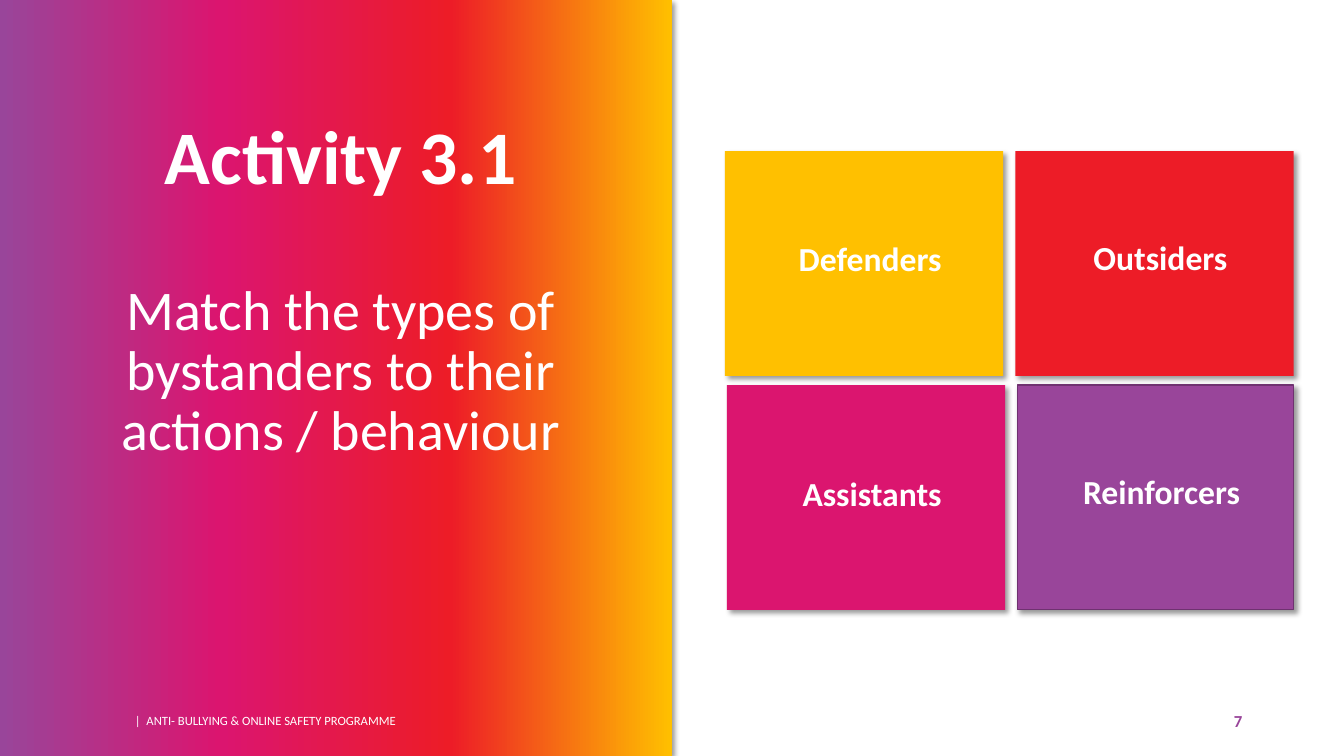
from lxml.etree import SubElement
from pptx import Presentation
from pptx.dml.color import RGBColor
from pptx.enum.shapes import MSO_SHAPE as Shape
from pptx.enum.text import MSO_ANCHOR as Anchor, PP_ALIGN as Align
from pptx.oxml.ns import qn
from pptx.util import Inches, Pt

COLOURS = {
    "purple": "99459A",
    "pink": "DB156F",
    "red": "ED1C27",
    "yellow": "FFC000",
    "plum": "6F3270",
    "white": "FFFFFF",
    "black": "000000",
}


def rgb(colour):
    return RGBColor.from_string(COLOURS[colour])


def add_run(paragraph, text, size=24, colour="white", bold=False, font="Calibri"):
    run = paragraph.add_run()
    run.text = text
    run.font.name = font
    run.font.size = Pt(size)
    run.font.bold = bold
    run.font.color.rgb = rgb(colour)


class SlideBuilder:
    def __init__(self, slide):
        self.slide = slide

    def panel(self, left, top, width, height, fill=None, gradient=None, line=None):
        """Rectangle with a soft shadow; gradient is a list of (percent, colour)."""
        panel = self.slide.shapes.add_shape(
            Shape.RECTANGLE, Inches(left), Inches(top), Inches(width), Inches(height))
        if gradient:
            panel.fill.gradient()
            panel.fill.gradient_angle = 0
            stops = panel._element.spPr.find(qn("a:gradFill")).find(qn("a:gsLst"))
            for stop in list(stops):
                stops.remove(stop)
            for percent, colour in gradient:
                stop = SubElement(stops, qn("a:gs"), pos=str(percent * 1000))
                SubElement(stop, qn("a:srgbClr"), val=COLOURS[colour])
        else:
            panel.fill.solid()
            panel.fill.fore_color.rgb = rgb(fill)
        if line:
            panel.line.color.rgb = rgb(line)
            panel.line.width = Pt(1)
        else:
            panel.line.fill.background()
        self.shadow(panel)

    def shadow(self, panel):
        panel.shadow.inherit = False
        effects = panel._element.spPr.find(qn("a:effectLst"))
        outer = SubElement(effects, qn("a:outerShdw"), blurRad=str(Pt(4)),
                           dist=str(Pt(3)), dir=str(45 * 60000),
                           algn="tl", rotWithShape="0")
        tint = SubElement(outer, qn("a:srgbClr"), val=COLOURS["black"])
        SubElement(tint, qn("a:alpha"), val="40000")

    def frame(self, left, top, width, height, anchor=Anchor.TOP):
        box = self.slide.shapes.add_textbox(
            Inches(left), Inches(top), Inches(width), Inches(height))
        box.text_frame.word_wrap = True
        box.text_frame.vertical_anchor = anchor
        return box.text_frame

    def centred(self, paragraph, text, space_before=0, **style):
        """Centred paragraph with tight lines and a small left margin."""
        paragraph.alignment = Align.CENTER
        paragraph.line_spacing = 0.9
        paragraph.space_before = Pt(space_before)
        paragraph._p.get_or_add_pPr().set("marL", str(Inches(0.12)))
        add_run(paragraph, text, **style)


def main():
    deck = Presentation()
    deck.slide_width, deck.slide_height = Inches(13.33), Inches(7.5)
    page = SlideBuilder(deck.slides.add_slide(deck.slide_layouts[6]))

    page.panel(0, 0, 6.67, 7.5, gradient=[
        (0, "purple"), (33, "pink"), (67, "red"), (100, "yellow")])

    activity = page.frame(0.64, 1.13, 5.36, 5.17)
    page.centred(activity.paragraphs[0], "Activity 3.1", size=54, bold=True)
    page.centred(activity.add_paragraph(),
                 "Match the types of bystanders to their actions / behaviour",
                 space_before=58, size=40)

    page_number = page.frame(9.42, 6.95, 3, 0.4, Anchor.MIDDLE).paragraphs[0]
    page_number.alignment = Align.RIGHT
    add_run(page_number, "7", size=12, colour="purple", bold=True)

    footer = page.frame(1.24, 6.95, 4.18, 0.4, Anchor.MIDDLE).paragraphs[0]
    add_run(footer, "|  ANTI- BULLYING & ONLINE SAFETY PROGRAMME", size=9)

    # Bystander type, card left, top and width, label top, fill, outline
    bystanders = [
        ("Defenders", 7.19, 1.5, 2.76, 2.36, "yellow", None),
        ("Outsiders", 10.07, 1.5, 2.76, 2.35, "red", None),
        ("Assistants", 7.21, 3.82, 2.76, 4.69, "pink", None),
        ("Reinforcers", 10.09, 3.82, 2.74, 4.67, "purple", "plum"),
    ]
    for bystander, left, top, width, label_top, fill, outline in bystanders:
        page.panel(left, top, width, 2.23, fill=fill, line=outline)
        label = page.frame(left, label_top, width, 0.52)
        page.centred(label.paragraphs[0], bystander, bold=True)

    deck.save("out.pptx")


if __name__ == "__main__":
    main()
